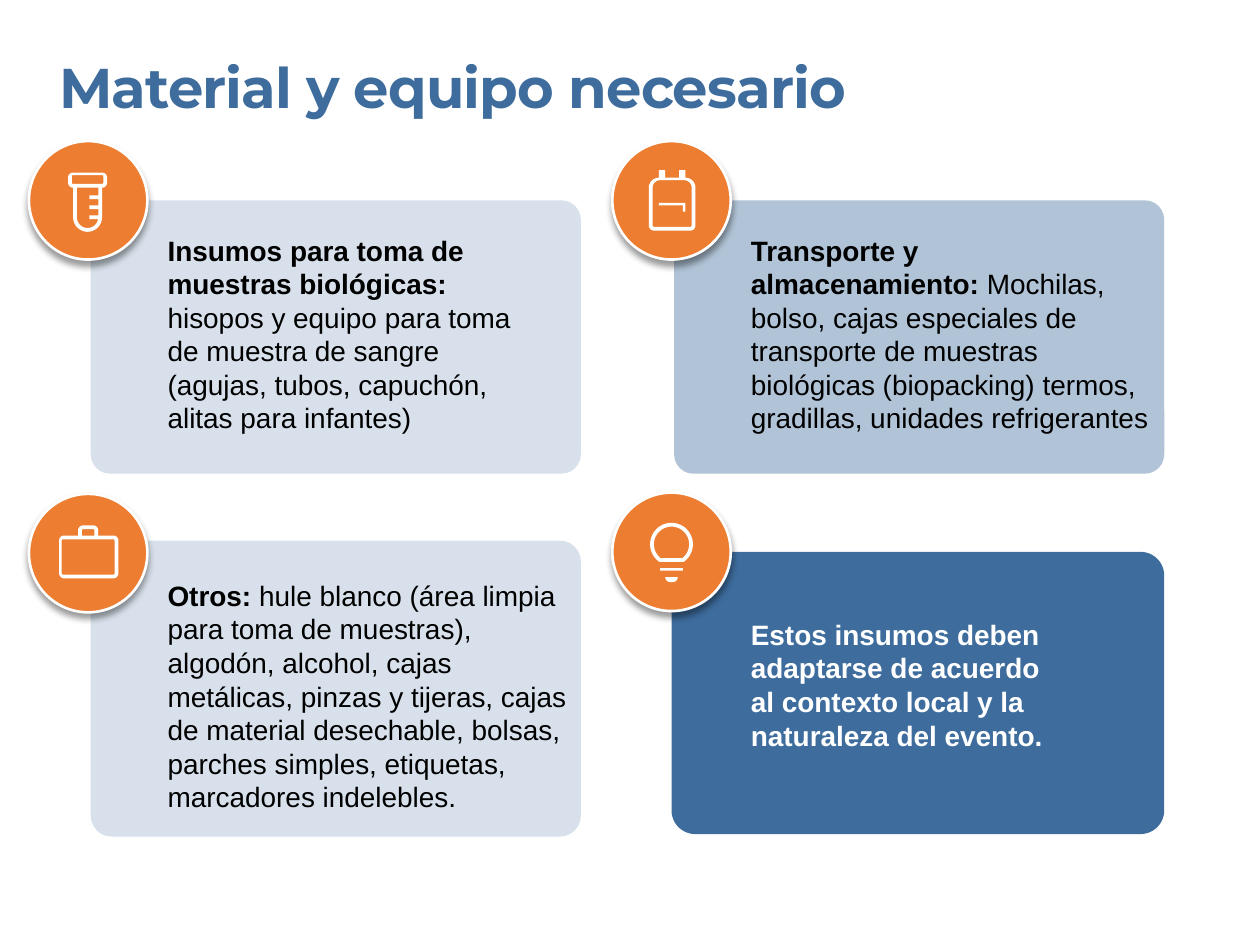
"""Build a slide with four cards on the materials and equipment for field sampling."""
import math

import pptx
import pptx.dml.color
import pptx.enum.shapes
import pptx.enum.text
import pptx.oxml
import pptx.oxml.ns
import pptx.util

COLORS = {"blue": "3D6C9D", "orange": "ED7D31", "white": "FFFFFF", "black": "000000"}
TITLE = "Material y equipo necesario"
SLIDE_W, SLIDE_H = 10, 7.5
COL_PITCH, CARD_W = 4.63, 3.89
CARD_X, TEXT_X, BADGE_X = 0.72, 1.33, 0.23
BADGE = 0.94

CARDS = [
    {"col": 0, "top": 1.59, "height": 2.17, "alpha": 20, "badge_top": 1.12, "icon": "tube",
     "text_top": 1.85, "text_size": (2.92, 1.62), "color": "black",
     "runs": [("Insumos para toma de muestras biológicas:", True),
              (" hisopos y equipo para toma de muestra de sangre (agujas, tubos, capuchón, "
               "alitas para infantes)", False)]},
    {"col": 1, "top": 1.59, "height": 2.17, "alpha": 40, "badge_top": 1.12, "icon": "backpack",
     "text_top": 1.85, "text_size": (3.17, 1.62), "color": "black",
     "runs": [("Transporte y almacenamiento:", True),
              (" Mochilas, bolso, cajas especiales de transporte de muestras biológicas "
               "(biopacking) termos, gradillas, unidades refrigerantes", False)]},
    {"col": 0, "top": 4.29, "height": 2.35, "alpha": 20, "badge_top": 3.92, "icon": "briefcase",
     "text_top": 4.59, "text_size": (3.28, 1.88), "color": "black",
     "runs": [("Otros:", True),
              (" hule blanco (área limpia para toma de muestras), algodón, alcohol, cajas "
               "metálicas, pinzas y tijeras, cajas de material desechable, bolsas, "
               "parches simples, etiquetas, marcadores indelebles.", False)]},
    {"col": 1, "top": 4.38, "height": 2.24, "alpha": 100, "badge_top": 3.91, "icon": "bulb",
     "text_top": 4.9, "text_size": (2.44, 1.08), "color": "white", "widen": 0.02, "adj": 0.084,
     "runs": [("Estos insumos deben adaptarse de acuerdo al contexto local y la naturaleza "
               "del evento.", True)]},
]


def arc(cx, cy, radius, start, end, steps=8):
    angles = [math.radians(start + (end - start) * i / steps) for i in range(steps + 1)]
    return [(cx + radius * math.cos(a), cy + radius * math.sin(a)) for a in angles]


def box(left, top, right, bottom, top_r=0, bottom_r=0):
    corners = [(left + top_r, top + top_r, top_r, 180), (right - top_r, top + top_r, top_r, 270),
               (right - bottom_r, bottom - bottom_r, bottom_r, 0),
               (left + bottom_r, bottom - bottom_r, bottom_r, 90)]
    return [pt for cx, cy, r, a in corners
            for pt in (arc(cx, cy, r, a, a + 90) if r else [(cx, cy)])]


ICONS = {
    "tube": [box(31, 25, 62, 37, 4, 4), box(34, 27, 59, 34, 1, 1),
             box(35, 37, 58, 72, 0, 11.5), box(38, 37, 55, 69, 0, 8.5)]
            + [box(48, y, 55, y + 3) for y in (43, 51, 59)],
    "backpack": [box(29, 29, 66, 71, 8, 4), box(32, 31, 63, 68, 6, 1),
                 box(37, 23, 42, 29), box(53, 23, 58, 29),
                 [(56, 56), (58, 56), (58, 49), (37, 49), (37, 51), (56, 51)]],
    "briefcase": [box(24, 33, 71, 67, 4, 4), box(26, 36, 68, 64, 1, 1),
                  box(39, 25, 55, 33, 4), box(42, 28, 52, 33, 1)],
    "bulb": [arc(47, 41, 17, 125, 415, 40), arc(47, 41, 14, 128, 412, 40),
             box(38, 60, 56, 62), box(42, 67, 52, 71, 0, 4)],
}


def rgb(name):
    return pptx.dml.color.RGBColor.from_string(COLORS[name])


def style(s, fill, line=None, alpha=100):
    s.shadow.inherit = False
    s.fill.solid()
    s.fill.fore_color.rgb = rgb(fill)
    if alpha < 100:
        clr = s._element.spPr.find(".//" + pptx.oxml.ns.qn("a:srgbClr"))
        clr.append(pptx.oxml.parse_xml(
            f'<a:alpha {pptx.oxml.ns.nsdecls("a")} val="{alpha * 1000}"/>'))
    if line:
        s.line.color.rgb = rgb(line)
        s.line.width = pptx.util.Pt(1.5)
    else:
        s.line.fill.background()


def add_shape(slide, kind, *frame):
    return slide.shapes.add_shape(kind, *(pptx.util.Inches(v) for v in frame))


def add_text(slide, runs, frame, size=16, font="Arial", color="black", spacing=None):
    s = slide.shapes.add_textbox(*(pptx.util.Inches(v) for v in frame))
    tf = s.text_frame
    tf.word_wrap = True
    tf.auto_size = pptx.enum.text.MSO_AUTO_SIZE.SHAPE_TO_FIT_TEXT
    tf.margin_left = tf.margin_right = tf.margin_top = tf.margin_bottom = 0
    p = tf.paragraphs[0]
    for text, bold in runs:
        r = p.add_run()
        r.text = text
        r.font.size = pptx.util.Pt(size)
        r.font.name = font
        r.font.bold = bold
        r.font.color.rgb = rgb(color)
        if spacing:
            r._r.get_or_add_rPr().set("spc", str(int(spacing * 100)))


def add_badge(slide, left, top):
    s = add_shape(slide, pptx.enum.shapes.MSO_SHAPE.OVAL, left, top, BADGE, BADGE)
    style(s, "orange", line="white")
    effects = s._element.spPr.find(pptx.oxml.ns.qn("a:effectLst"))
    effects.append(pptx.oxml.parse_xml(
        f'<a:outerShdw {pptx.oxml.ns.nsdecls("a")} blurRad="{pptx.util.Pt(4)}" '
        f'dist="{pptx.util.Pt(3)}" dir="5400000" rotWithShape="0">'
        f'<a:srgbClr val="{COLORS["black"]}"><a:alpha val="40000"/></a:srgbClr></a:outerShdw>'))


def add_icon(slide, outlines, left, top):
    outlines = [[(pptx.util.Inches(left + x / 100), pptx.util.Inches(top + y / 100))
                 for x, y in outline] for outline in outlines]
    builder = slide.shapes.build_freeform(*outlines[0][0])
    for i, outline in enumerate(outlines):
        if i:
            builder.move_to(*outline[0])
        builder.add_line_segments(outline[1:], close=True)
    style(builder.convert_to_shape(), "white")


def add_card(slide, card):
    shift = card["col"] * COL_PITCH
    widen = card.get("widen", 0)
    s = add_shape(slide, pptx.enum.shapes.MSO_SHAPE.ROUNDED_RECTANGLE,
                  CARD_X + shift - widen, card["top"], CARD_W + widen, card["height"])
    s.adjustments[0] = card.get("adj", 0.071)
    style(s, "blue", alpha=card["alpha"])
    add_text(slide, card["runs"], (TEXT_X + shift, card["text_top"], *card["text_size"]),
             color=card["color"])
    add_badge(slide, BADGE_X + shift, card["badge_top"])
    add_icon(slide, ICONS[card["icon"]], BADGE_X + shift, card["badge_top"])


def main():
    prs = pptx.Presentation()
    prs.slide_width = pptx.util.Inches(SLIDE_W)
    prs.slide_height = pptx.util.Inches(SLIDE_H)
    slide = prs.slides.add_slide(prs.slide_layouts[6])
    add_text(slide, [(TITLE, True)], (0.47, 0.42, 8.55, 0.54), size=32, font="Montserrat",
             color="blue", spacing=-0.5)
    for card in CARDS:
        add_card(slide, card)
    prs.save("out.pptx")


if __name__ == "__main__":
    main()
